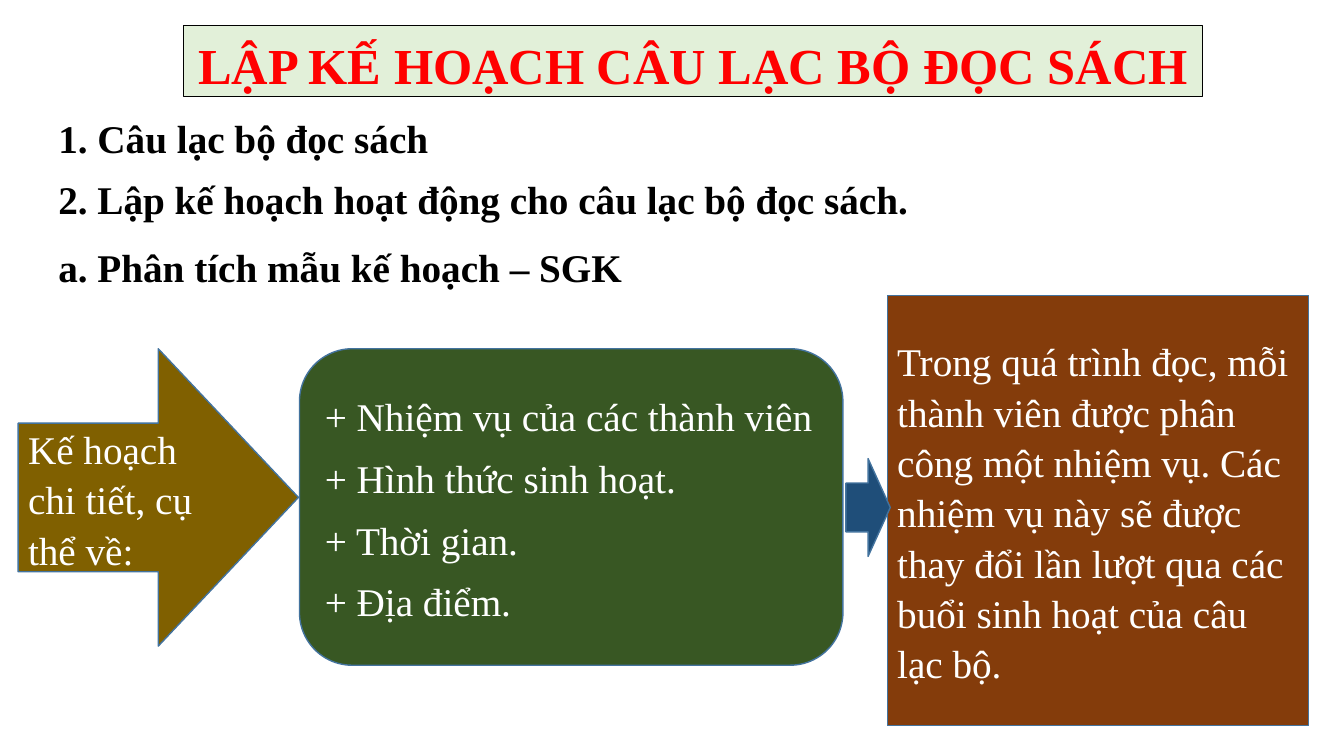
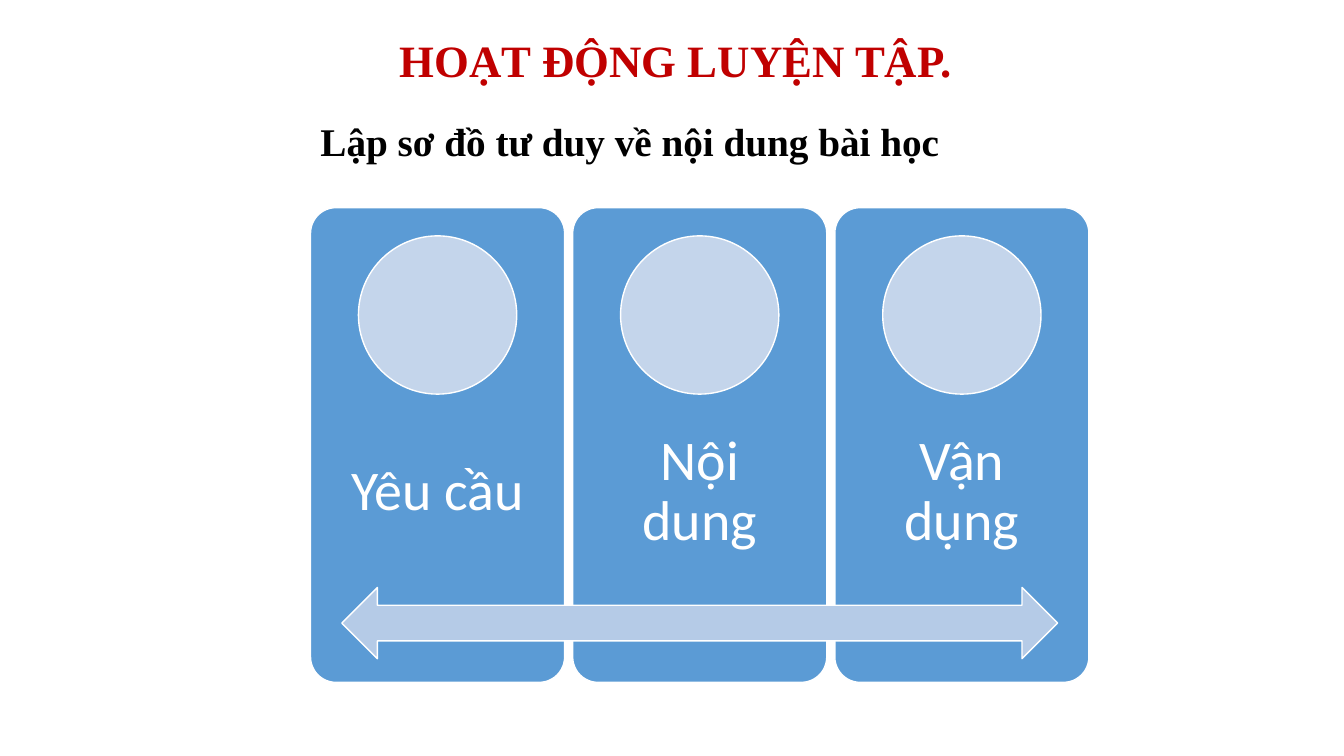
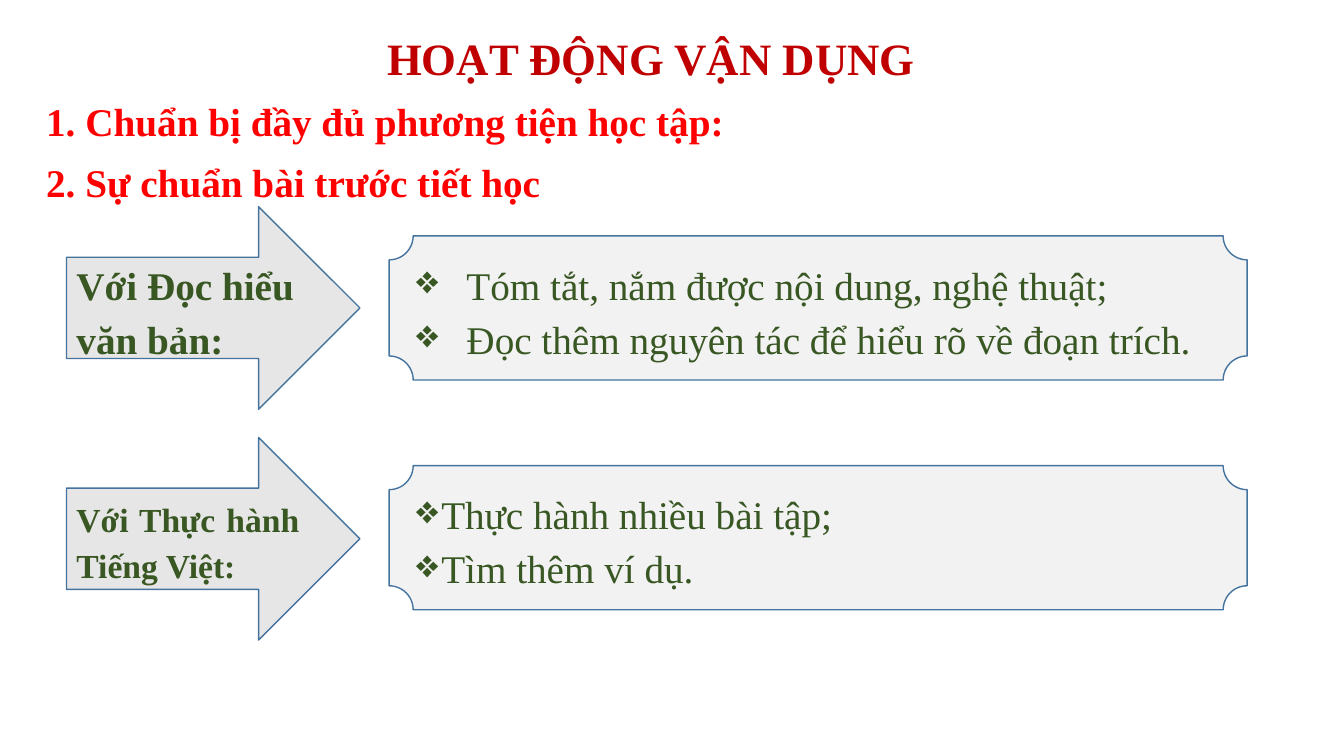
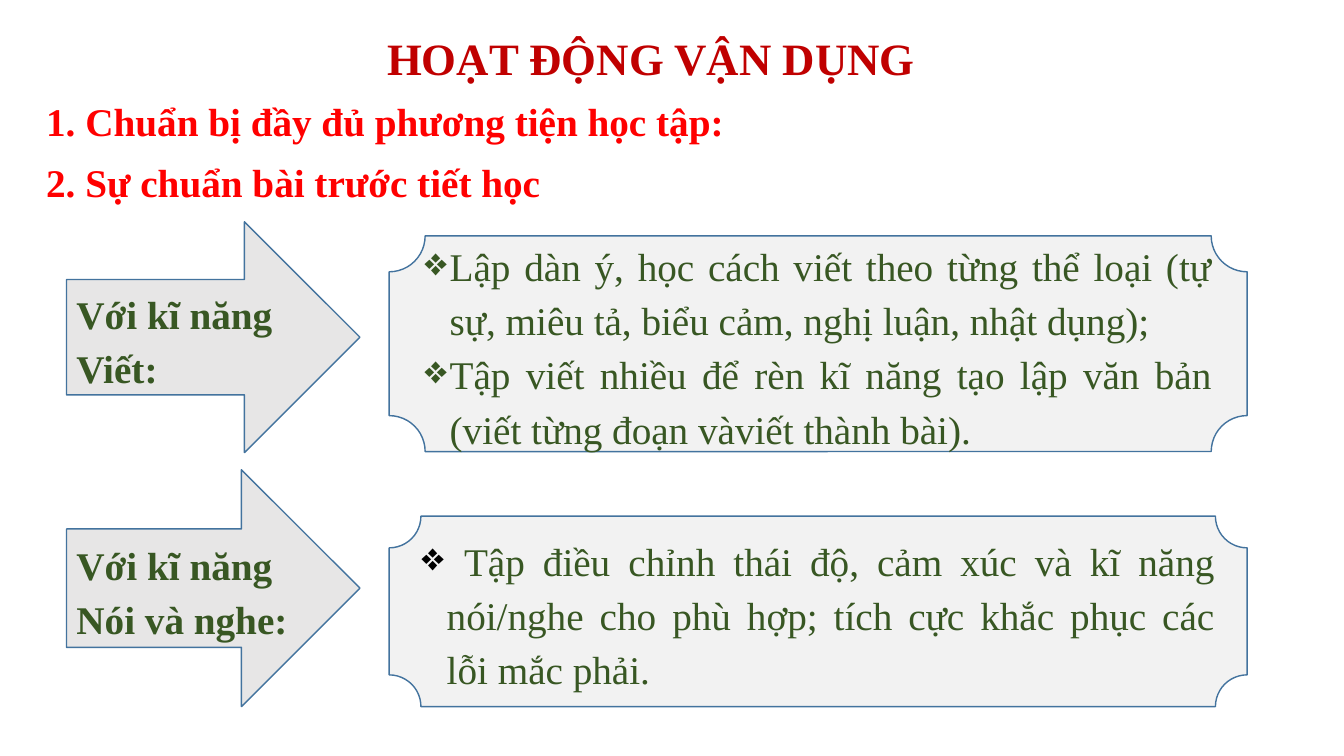
from lxml.etree import SubElement
from pptx import Presentation
from pptx.dml.color import RGBColor
from pptx.enum.shapes import MSO_SHAPE
from pptx.enum.text import MSO_ANCHOR, MSO_AUTO_SIZE, PP_ALIGN
from pptx.oxml.ns import qn
from pptx.util import Inches, Pt

COLORS = {
    "black": "000000", "white": "FFFFFF", "red": "FF0000", "crimson": "C00000",
    "mint": "E2F0D9", "olive": "806000", "green": "385723", "brown": "843C0B",
    "navy": "1F4E79", "outline": "43739E", "blue": "5B9BD5", "pale": "C4D5EB",
    "mist": "B5CBE7", "gray": "E7E6E6", "light": "F2F2F2",
}
SERIF = "Times New Roman"
LEFT, CENTER, JUSTIFY = PP_ALIGN.LEFT, PP_ALIGN.CENTER, PP_ALIGN.JUSTIFY
BODY = dict(spacing=1.07, after=8)
LESSON = dict(spacing=1.15, before=15, after=7.5)

CLUB_TITLE = "LẬP KẾ HOẠCH CÂU LẠC BỘ ĐỌC SÁCH"
CLUB_HEADINGS = [
    ("1. Câu lạc bộ đọc sách", (0.48, 1.05, 3.91, 0.61)),
    ("2. Lập kế hoạch hoạt động cho câu lạc bộ đọc sách.", (0.48, 1.66, 8.73, 0.57)),
    ("a. Phân tích mẫu kế hoạch – SGK", (0.48, 2.33, 6.09, 0.61)),
]
CLUB_FLOW = [
    (MSO_SHAPE.RIGHT_ARROW, (0.18, 3.46, 2.78, 2.95), "olive",
     ["Kế hoạch chi tiết, cụ thể về:"]),
    (MSO_SHAPE.ROUNDED_RECTANGLE, (2.97, 3.46, 5.39, 3.14), "green",
     ["+ Nhiệm vụ của các thành viên", "+ Hình thức sinh hoạt.",
      "+ Thời gian.", "+ Địa điểm."]),
    (MSO_SHAPE.RECTANGLE, (8.8, 2.93, 4.18, 4.27), "brown",
     ["Trong quá trình đọc, mỗi thành viên được phân công một nhiệm vụ. "
      "Các nhiệm vụ này sẽ được thay đổi lần lượt qua các buổi sinh hoạt của câu lạc bộ."]),
    (MSO_SHAPE.RIGHT_ARROW, (8.39, 4.55, 0.44, 0.97), "navy", []),
]

PRACTICE_TITLE = "HOẠT ĐỘNG LUYỆN TẬP."
PRACTICE_TASK = "Lập sơ đồ tư duy về nội dung bài học"
CARDS = ["Yêu cầu", "Nội dung", "Vận dụng"]

APPLY_TITLE = "HOẠT ĐỘNG VẬN DỤNG"
APPLY_HEADINGS = [
    ("1. Chuẩn bị đầy đủ phương tiện học tập:", 7),
    ("2. Sự chuẩn bài trước tiết học", 5.16),
]
APPLY_PAGES = [
    [
        dict(label="Với Đọc hiểu văn bản:", arrow=(2.05, 2.01), plaque=(2.34, 1.43),
             items=["Tóm tắt, nắm được nội dung, nghệ thuật;",
                    "Đọc thêm nguyên tác để hiểu rõ về đoạn trích."],
             margin=0.5, align=LEFT),
        dict(label="Với Thực hành Tiếng Việt:", arrow=(4.34, 2.01), plaque=(4.62, 1.43),
             items=["Thực hành nhiều bài tập;", "Tìm thêm ví dụ."],
             label_size=24, label_align=JUSTIFY),
    ],
    [
        dict(label="Với kĩ năng Viết:", arrow=(2.2, 2.29), plaque=(2.34, 2.14),
             items=["Lập dàn ý, học cách viết theo từng thể loại "
                    "(tự sự, miêu tả, biểu cảm, nghị luận, nhật dụng);",
                    "Tập viết nhiều để rèn kĩ năng tạo lập văn bản "
                    "(viết từng đoạn vàviết thành bài)."]),
        dict(label="Với kĩ năng Nói và nghe:", arrow=(4.66, 2.35), plaque=(5.12, 1.89),
             items=[" Tập điều chỉnh thái độ, cảm xúc và kĩ năng nói/nghe cho phù hợp; "
                    "tích cực khắc phục các lỗi mắc phải."],
             bullet="black", label_style=dict(spacing=1.15)),
    ],
]


def rgb(name):
    return RGBColor.from_string(COLORS[name])


def add_bullet(para, color, margin, indent):
    props = para._p.get_or_add_pPr()
    props.set("marL", str(Inches(margin)))
    props.set("indent", str(Inches(indent)))
    SubElement(SubElement(props, qn("a:buClr")), qn("a:srgbClr")).set("val", COLORS[color])
    SubElement(props, qn("a:buChar")).set("char", "❖")


def write(box, lines, color, size=28, bold=False, font=SERIF, align=LEFT,
          spacing=1.0, before=0, after=0, bullet=None, margin=0.25):
    frame = box.text_frame
    for index, line in enumerate(lines):
        para = frame.add_paragraph() if index else frame.paragraphs[0]
        para.text = line
        if bullet:
            add_bullet(para, bullet, margin, -0.5)
        para.alignment = align
        para.line_spacing = spacing
        para.space_before, para.space_after = Pt(before), Pt(after)
        para.font.size, para.font.bold, para.font.name = Pt(size), bold, font
        para.font.color.rgb = rgb(color)


def add_text(page, area, line, color, **style):
    box = page.shapes.add_textbox(*map(Inches, area))
    box.text_frame.word_wrap = False
    box.text_frame.auto_size = MSO_AUTO_SIZE.SHAPE_TO_FIT_TEXT
    write(box, [line], color, bold=True, **style)


def add_figure(page, kind, area, fill, line="outline", width=1):
    figure = page.shapes.add_shape(kind, *map(Inches, area))
    figure.shadow.inherit = False
    figure.fill.solid()
    figure.fill.fore_color.rgb = rgb(fill)
    figure.line.color.rgb = rgb(line)
    figure.line.width = Pt(width)
    figure.text_frame.word_wrap = True
    figure.text_frame.vertical_anchor = MSO_ANCHOR.MIDDLE
    return figure


def build_club(page):
    banner = add_figure(page, MSO_SHAPE.RECTANGLE, (1.82, 0.25, 10.11, 0.71),
                        "mint", "black", 0.75)
    banner.text_frame.vertical_anchor = MSO_ANCHOR.TOP
    write(banner, [CLUB_TITLE], "red", size=36, bold=True, align=CENTER, **BODY)
    for heading, area in CLUB_HEADINGS:
        add_text(page, area, heading, "black", **BODY)
    for kind, area, fill, lines in CLUB_FLOW:
        write(add_figure(page, kind, area, fill), lines, "white", **BODY)


def build_practice(page):
    left, top, width, height, pitch, circle = 3.08, 2.06, 2.52, 4.71, 2.6, 1.57
    add_text(page, (3.84, 0.24, 5.73, 0.64), PRACTICE_TITLE, "crimson",
             size=32, align=CENTER, **BODY)
    add_text(page, (left, 1.08, 6.51, 0.57), PRACTICE_TASK, "black", **BODY)
    for index, name in enumerate(CARDS):
        x = left + index * pitch
        card = add_figure(page, MSO_SHAPE.ROUNDED_RECTANGLE, (x, top, width, height),
                          "blue", "white")
        card.adjustments[0] = 0.1
        label = page.shapes.add_textbox(
            *map(Inches, (x, top + 0.4 * height, width, 0.4 * height)))
        frame = label.text_frame
        frame.word_wrap = True
        frame.vertical_anchor = MSO_ANCHOR.MIDDLE
        frame.margin_left = frame.margin_right = Inches(0.31)
        frame.margin_top = frame.margin_bottom = Inches(0.31)
        write(label, [name], "white", size=40, font="Calibri", align=CENTER, spacing=0.9)
        add_figure(page, MSO_SHAPE.OVAL,
                   (x + (width - circle) / 2, top + 0.28, circle, circle), "pale", "white")
    add_figure(page, MSO_SHAPE.LEFT_RIGHT_ARROW,
               (left + 0.31, top + 0.8 * height, 7.1, 0.15 * height), "mist", "white")


def build_apply(page, rows):
    add_text(page, (3.74, 0.22, 5.49, 0.64), APPLY_TITLE, "crimson", size=32, **BODY)
    for index, (heading, width) in enumerate(APPLY_HEADINGS):
        add_text(page, (0.36, 0.85 + 0.6 * index, width, 0.6), heading, "red",
                 align=JUSTIFY, **LESSON)
    for row in rows:
        top, height = row["arrow"]
        arrow = add_figure(page, MSO_SHAPE.RIGHT_ARROW, (0.66, top, 2.91, height), "gray")
        write(arrow, [row["label"]], "green", size=row.get("label_size", 28), bold=True,
              align=row.get("label_align", LEFT), **row.get("label_style", LESSON))
        top, height = row["plaque"]
        plaque = add_figure(page, MSO_SHAPE.PLAQUE, (3.86, top, 8.51, height), "light")
        write(plaque, row["items"], "green", align=row.get("align", JUSTIFY), spacing=1.15,
              bullet=row.get("bullet", "green"), margin=row.get("margin", 0.25))


def main():
    deck = Presentation()
    deck.slide_width, deck.slide_height = Inches(13.33), Inches(7.5)
    blank = deck.slide_layouts[6]
    build_club(deck.slides.add_slide(blank))
    build_practice(deck.slides.add_slide(blank))
    for rows in APPLY_PAGES:
        build_apply(deck.slides.add_slide(blank), rows)
    deck.save("out.pptx")


if __name__ == "__main__":
    main()
